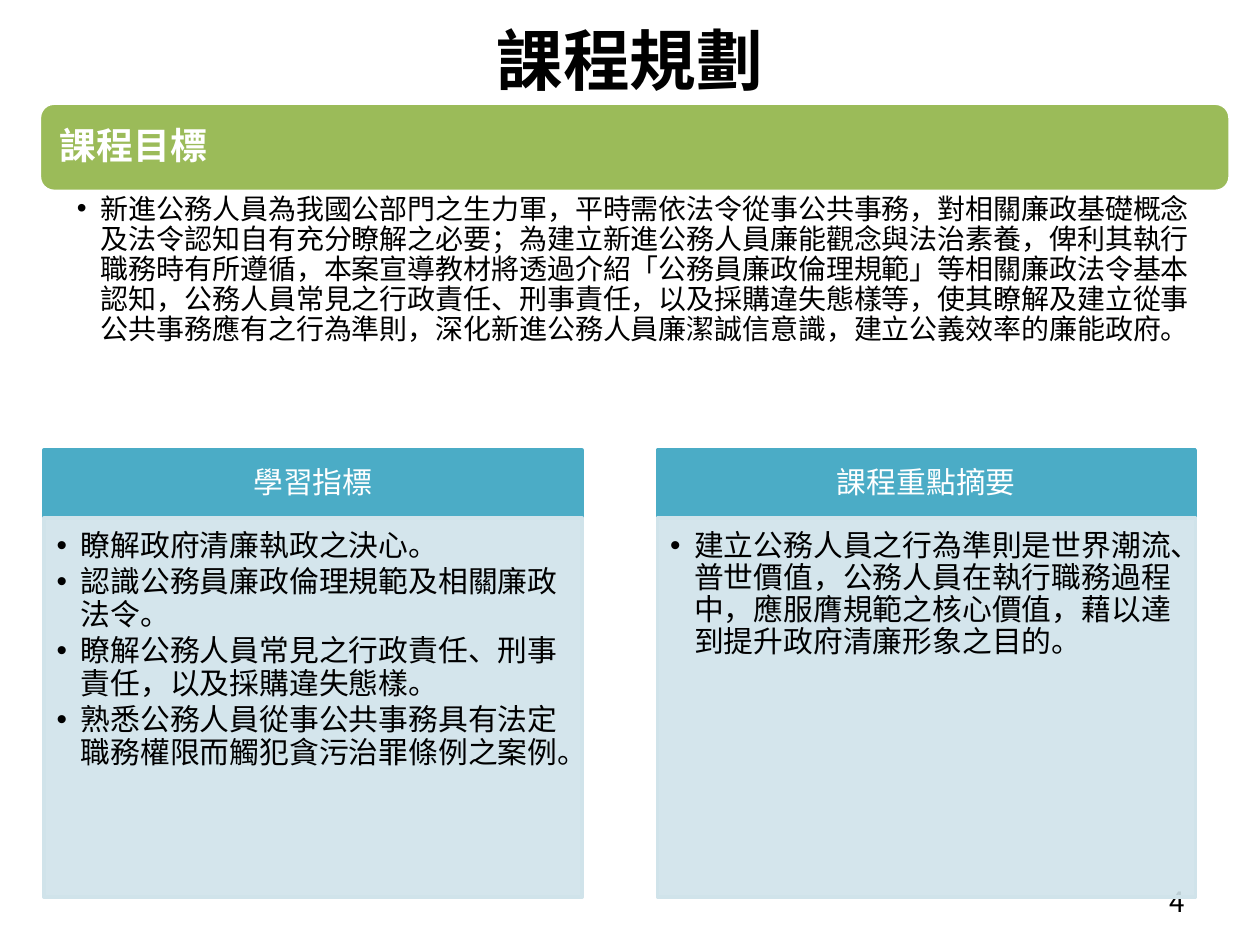
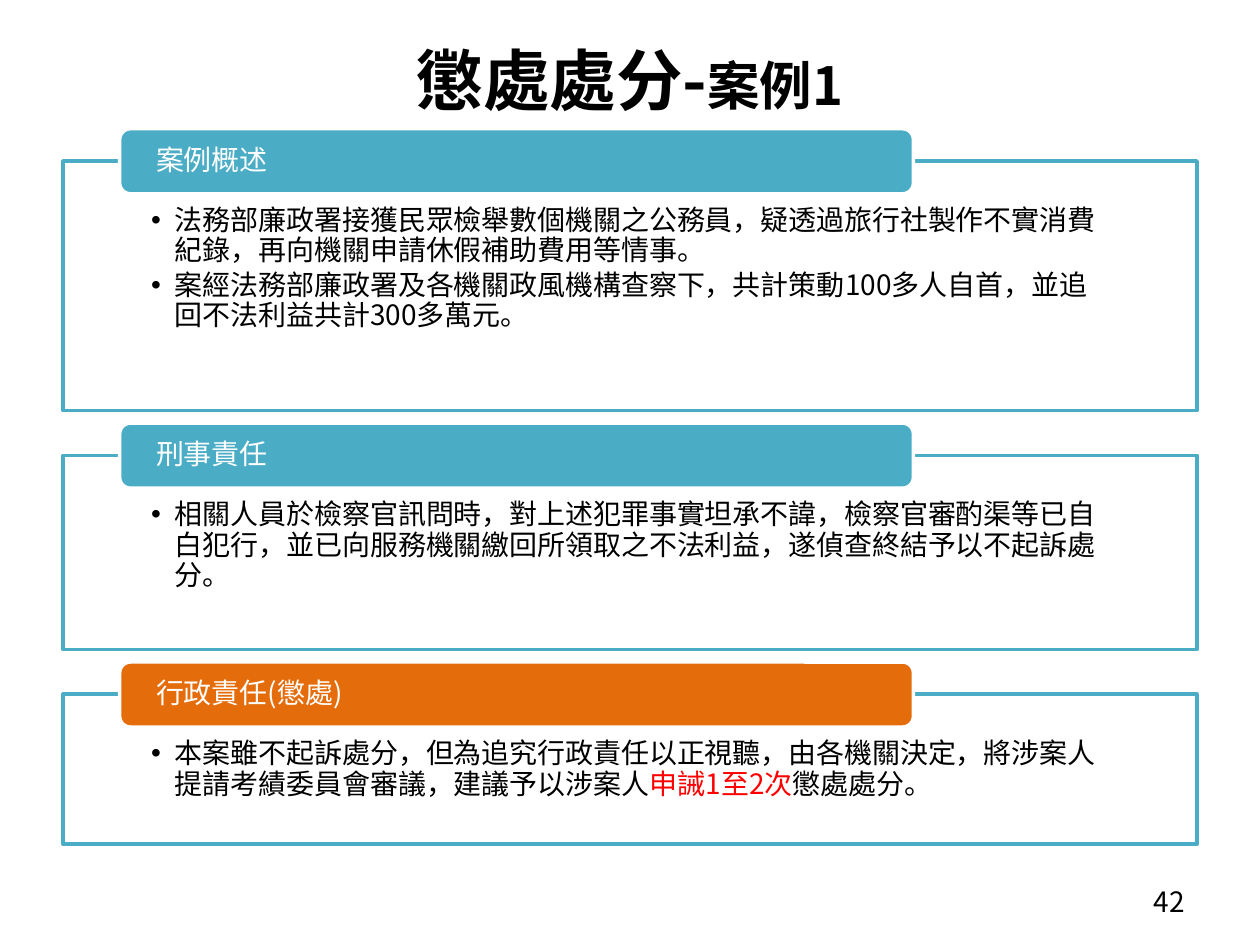
"""Builds the course plan slide and the disciplinary case slide."""
from typing import NamedTuple

from lxml import etree
from pptx import Presentation
from pptx import util as u
from pptx.dml.color import RGBColor
from pptx.enum import shapes, text
from pptx.oxml.ns import qn

Pt = u.Pt
SC, TC = "Noto Sans CJK SC", "Noto Sans CJK TC"
BLACK, WHITE, RED = "000000", "FFFFFF", "FF0000"
GREEN, TEAL, PALE, ORANGE = "9BBB59", "4BACC6", "D0E3EA", "E46C0A"
RECT, ROUND = shapes.MSO_SHAPE.RECTANGLE, shapes.MSO_SHAPE.ROUNDED_RECTANGLE
LEFT, CENTER, RIGHT = text.PP_ALIGN.LEFT, text.PP_ALIGN.CENTER, text.PP_ALIGN.RIGHT
TOP, MIDDLE = text.MSO_ANCHOR.TOP, text.MSO_ANCHOR.MIDDLE
COMPARISON = 4
INDENT = Pt(13.7)


class Box(NamedTuple):
    left: float
    top: float
    width: float
    height: float


class Span(NamedTuple):
    text: str
    color: str = ""
    size: float = 0
    font: str = ""


class Column(NamedTuple):
    heading: str
    items: list


class Case(NamedTuple):
    heading: str
    items: list
    height: float
    color: str = TEAL


COLUMNS = [
    Column("學習指標", [
        "瞭解政府清廉執政之決心。",
        "認識公務員廉政倫理規範及相關廉政法令。",
        "瞭解公務人員常見之行政責任、刑事責任，以及採購違失態樣。",
        "熟悉公務人員從事公共事務具有法定職務權限而觸犯貪污治罪條例之案例。",
    ]),
    Column("課程重點摘要", [
        "建立公務人員之行為準則是世界潮流、普世價值，公務人員在執行職務過程中，"
        "應服膺規範之核心價值，藉以達到提升政府清廉形象之目的。",
    ]),
]
GOAL = (
    "新進公務人員為我國公部門之生力軍，平時需依法令從事公共事務，對相關廉政基礎概念及法令認知"
    "自有充分瞭解之必要；為建立新進公務人員廉能觀念與法治素養，俾利其執行職務時有所遵循，"
    "本案宣導教材將透過介紹「公務員廉政倫理規範」等相關廉政法令基本認知，公務人員常見之行政責任、"
    "刑事責任，以及採購違失態樣等，使其瞭解及建立從事公共事務應有之行為準則，"
    "深化新進公務人員廉潔誠信意識，建立公義效率的廉能政府。"
)
CASES = [
    Case("案例概述", [
        "法務部廉政署接獲民眾檢舉數個機關之公務員，疑透過旅行社製作不實消費紀錄，"
        "再向機關申請休假補助費用等情事。",
        "案經法務部廉政署及各機關政風機構查察下，共計策動100多人自首，"
        "並追回不法利益共計300多萬元。",
    ], 142.6),
    Case("刑事責任", [
        "相關人員於檢察官訊問時，對上述犯罪事實坦承不諱，檢察官審酌渠等已自白犯行，"
        "並已向服務機關繳回所領取之不法利益，遂偵查終結予以不起訴處分。",
    ], 110.9),
    Case("行政責任(懲處)", [
        [Span("本案雖不起訴處分，但為追究行政責任以正視聽，由各機關決定，將涉案人"
              "提請考績委員會審議，建議予以涉案人"),
         Span("申誡1至2次", RED),
         Span("懲處處分。")],
    ], 85.7, ORANGE),
]


def rgb(value: str) -> RGBColor:
    return RGBColor.from_string(value)


def paint(sp, fill: str, line: str, alpha: int = 100) -> None:
    sp.fill.solid()
    sp.fill.fore_color.rgb = rgb(fill)
    sp.line.color.rgb = rgb(line)
    sp.line.width = Pt(2)
    if alpha < 100:
        clr = sp.element.spPr.find(qn("a:solidFill"))[0]
        etree.SubElement(clr, qn("a:alpha")).set("val", str(alpha * 1000))


def place(sp, box: Box) -> None:
    sp.left, sp.top, sp.width, sp.height = map(Pt, box)


def write(tf, paras: list, *, size: float, color: str = BLACK, font: str = SC,
          bold: bool = False, align=LEFT, anchor=MIDDLE, insets=(7.2, 3.6, 7.2, 3.6),
          spacing: float = 0.9, after: float = 0, bullet: bool = False) -> None:
    tf.word_wrap = True
    tf.auto_size = text.MSO_AUTO_SIZE.NONE
    tf.vertical_anchor = anchor
    tf.margin_left, tf.margin_top, tf.margin_right, tf.margin_bottom = map(Pt, insets)
    for i, spans in enumerate(paras):
        p = tf.add_paragraph() if i else tf.paragraphs[0]
        p.alignment, p.line_spacing = align, spacing
        p.space_before, p.space_after = Pt(0), Pt(after)
        if bullet:
            pPr = p._p.get_or_add_pPr()
            pPr.set("marL", str(INDENT))
            pPr.set("indent", str(-INDENT))
            etree.SubElement(pPr, qn("a:buChar")).set("char", "•")
        for span in [Span(spans)] if isinstance(spans, str) else spans:
            r = p.add_run()
            r.text = span.text
            r.font.size, r.font.bold = Pt(span.size or size), bold
            r.font.color.rgb = rgb(span.color or color)
            r.font.name = span.font or font
            etree.SubElement(r._r.rPr, qn("a:ea")).set("typeface", r.font.name)


def add_heading(s, kind, box: Box, label: str, fill: str, line: str, **fmt) -> None:
    sp = s.shapes.add_shape(kind, *map(Pt, box))
    sp.shadow.inherit = False
    paint(sp, fill, line)
    write(sp.text_frame, [label], color=WHITE, **fmt)


def add_list(s, idx: int, box: Box, items: list, **fmt):
    sp = s.placeholders[idx]
    place(sp, box)
    s.shapes.element.append(sp.element)
    write(sp.text_frame, items, anchor=TOP, bullet=True, **fmt)
    return sp


def add_base(prs, title: list, title_top: float, number: str):
    s = prs.slides.add_slide(prs.slide_layouts[COMPARISON])
    place(s.shapes.title, Box(36, title_top, 648, 90))
    write(s.shapes.title.text_frame, title, size=38, font=TC, bold=True,
          align=CENTER, spacing=1.0)
    spare = s.placeholders[4].element
    spare.getparent().remove(spare)
    tb = s.shapes.add_textbox(*map(Pt, Box(516, 500.5, 168, 28.75)))
    write(tb.text_frame, [number], size=16, font=TC, align=RIGHT, spacing=1.0)
    return s


def build_plan(prs) -> None:
    s = add_base(prs, ["課程規劃"], -11.5, "4")
    bar = Box(22.5, 59, 680.4, 50.4)
    add_heading(s, ROUND, bar, "課程目標", GREEN, WHITE, size=21, bold=True,
                insets=(9.2, 8, 9.2, 8))
    goal = bar._replace(top=bar.top + bar.height, height=130.3)
    add_list(s, 1, goal, [GOAL], size=16, insets=(21.5, 2, 11.4, 2))
    for i, column in enumerate(COLUMNS):
        head = Box(25.2 + i * 350.5, 257.2, 307.4, 38.7)
        add_heading(s, RECT, head, column.heading, TEAL, TEAL, size=17, align=CENTER,
                    insets=(9.5, 5.5, 9.5, 5.5))
        body = head._replace(top=head.top + head.height, height=216.8)
        sp = add_list(s, 2 + i, body, column.items, size=17, after=2.7,
                      insets=(7.2, 7.2, 9.5, 10.8))
        paint(sp, PALE, PALE, 90)


def build_case(prs) -> None:
    title = [[Span("懲處處分-"), Span("案例", size=30), Span("1", size=30, font=SC)]]
    s = add_base(prs, title, 0, "42")
    top = 92
    for i, case in enumerate(CASES, 1):
        panel = Box(36, top, 648, case.height)
        sp = add_list(s, i, panel, case.items, size=16, after=2.4,
                      insets=(50.3, 26, 50.3, 8.5))
        paint(sp, WHITE, TEAL, 90)
        add_heading(s, ROUND, Box(68.4, top - 18.4, 453.6, 37.2), case.heading,
                    case.color, WHITE, size=16, insets=(19, 0, 19, 0))
        top += case.height + 25.6


def main() -> None:
    prs = Presentation()
    prs.slide_width, prs.slide_height = Pt(720), Pt(540)
    build_plan(prs)
    build_case(prs)
    prs.save("out.pptx")


if __name__ == "__main__":
    main()
